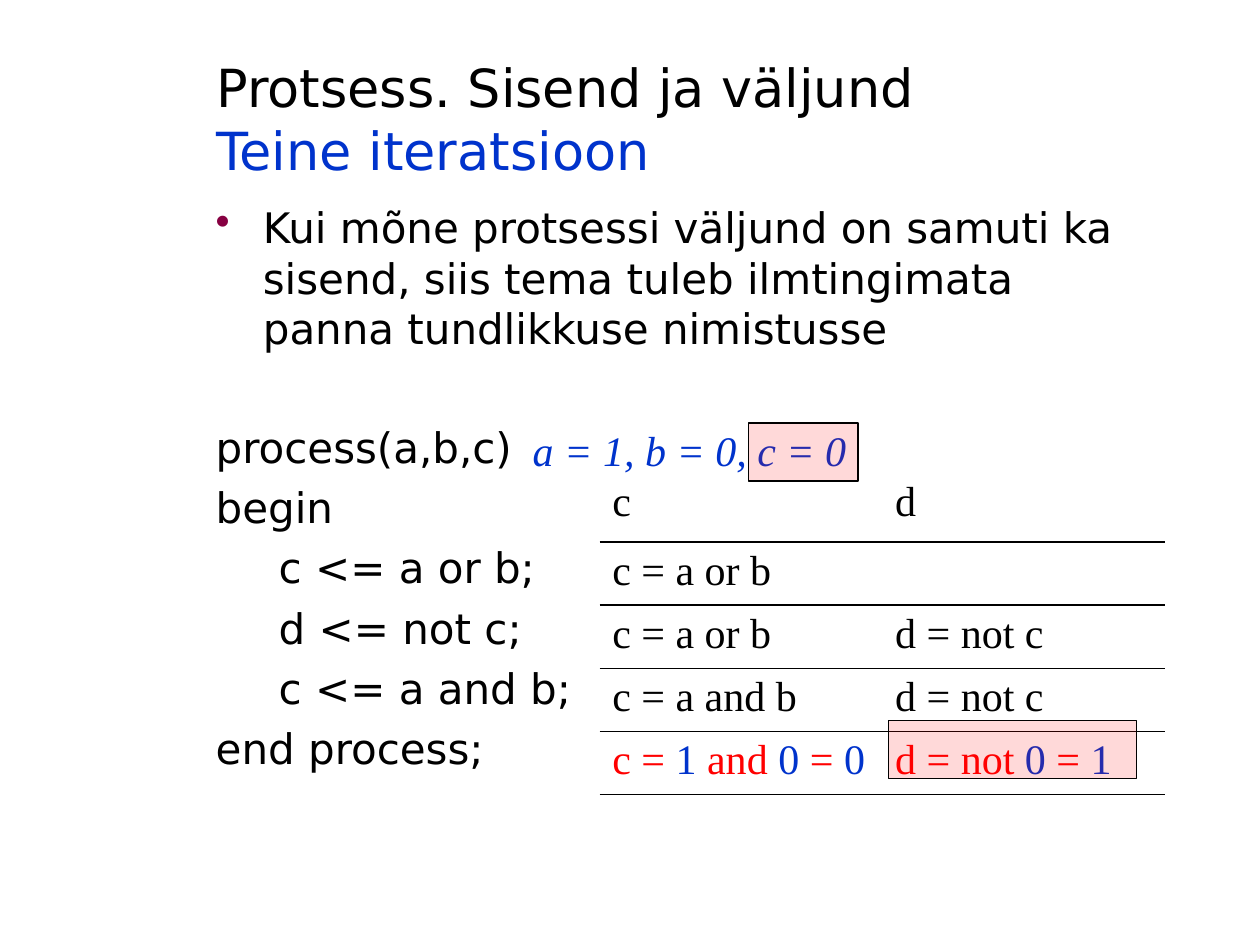
from dataclasses import dataclass

from lxml.etree import SubElement
from pptx import Presentation
from pptx.dml.color import RGBColor
from pptx.enum.shapes import MSO_SHAPE
from pptx.enum.text import MSO_ANCHOR, MSO_AUTO_SIZE, PP_ALIGN
from pptx.oxml import parse_xml
from pptx.oxml.ns import nsdecls, qn
from pptx.util import Cm, Pt


@dataclass(frozen=True)
class Theme:
    black: str = "000000"
    blue: str = "0033CC"
    red: str = "FF0000"
    plum: str = "870042"
    sans: str = "DejaVu Sans"
    serif: str = "Times New Roman"
    head: int = 30
    body: int = 24
    gap: float = 5.6


T = Theme()
INTRO = ("Kui mõne protsessi väljund on samuti ka sisend, "
         "siis tema tuleb ilmtingimata panna tundlikkuse nimistusse")
CODE = [("process(a,b,c)", 0), ("begin", 0), ("c <= a or b;", 1),
        ("d <= not c;", 1), ("c <= a and b;", 1), ("end process;", 0)]


def plain(text):
    return [(text, T.black)]


ROWS = [
    [plain("c"), plain("d")],
    [plain("c = a or b"), []],
    [plain("c = a or b"), plain("d = not c")],
    [plain("c = a and b"), plain("d = not c")],
    [[("c = ", T.red), ("1", T.blue), (" and ", T.red), ("0", T.blue),
      (" = ", T.red), ("0", T.blue)],
     [("d = not ", T.red), ("0", T.blue), (" = ", T.red), ("1", T.blue)]],
]


def add_run(para, text, color=T.black, font=T.sans, size=T.body, italic=False):
    run = para.add_run()
    run.text = text
    run.font.name, run.font.size, run.font.italic = font, Pt(size), italic
    run.font.color.rgb = RGBColor.from_string(color)


def set_title(slide):
    title = slide.shapes.title
    title.left, title.top = Cm(4.11), Cm(1.19)
    title.width, title.height = Cm(18.9), Cm(2.39)
    frame = title.text_frame
    frame.auto_size = MSO_AUTO_SIZE.NONE
    frame.vertical_anchor = MSO_ANCHOR.MIDDLE
    para = frame.paragraphs[0]
    para.alignment = PP_ALIGN.LEFT
    add_run(para, "Protsess. Sisend ja väljund", size=T.head)
    para.add_line_break()
    add_run(para, "Teine iteratsioon", T.blue, size=T.head)


def add_box(slide, left, top, width, height, wrap=True):
    box = slide.shapes.add_textbox(Cm(left), Cm(top), Cm(width), Cm(height))
    box.text_frame.word_wrap = wrap
    return box.text_frame


def set_bullet(para):
    props = para._p.get_or_add_pPr()
    props.set("marL", str(Cm(0.95)))
    props.set("indent", str(-Cm(0.95)))
    color = SubElement(props, qn("a:buClr"))
    SubElement(color, qn("a:srgbClr"), val=T.plum)
    SubElement(props, qn("a:buChar"), char="•")


def add_body(slide):
    frame = add_box(slide, 4.1, 3.94, 19, 13.44)
    para = frame.paragraphs[0]
    set_bullet(para)
    add_run(para, INTRO)
    for row, (text, level) in enumerate(CODE):
        para = frame.add_paragraph()
        # The code block starts one full line below the bullet.
        para.space_before = Pt(T.gap if row else 2 * T.gap + 28)
        para._p.get_or_add_pPr().set("marL", str(Cm(1.27 * level)))
        add_run(para, text)


def set_edges(cell, shown):
    """Draw black lines on the sides in shown and hide the others."""
    props = cell._tc.get_or_add_tcPr()
    for spot, side in enumerate("LRTB"):
        fill = (f'<a:solidFill><a:srgbClr val="{T.black}"/></a:solidFill>'
                if side in shown else "<a:noFill/>")
        props.insert(spot, parse_xml(
            f'<a:ln{side} {nsdecls("a")} w="{Pt(1)}">{fill}</a:ln{side}>'))


def add_grid(slide):
    frame = slide.shapes.add_table(len(ROWS), 2, Cm(12.09), Cm(9.53),
                                   Cm(11.4), Cm(6.2))
    table = frame.table
    table.first_row = table.horz_banding = False
    for col in table.columns:
        col.width = Cm(5.7)
    for y, row in enumerate(ROWS):
        table.rows[y].height = Cm(1.2 if y else 1.4)
        for x, parts in enumerate(row):
            cell = table.cell(y, x)
            cell.fill.background()
            set_edges(cell, "TB" if y else "B")
            for text, color in parts:
                add_run(cell.text_frame.paragraphs[0], text, color, T.serif)


def add_mark(slide, left, top, width):
    """Add a see-through red frame over a value."""
    mark = slide.shapes.add_shape(MSO_SHAPE.RECTANGLE, Cm(left), Cm(top),
                                  Cm(width), Cm(1.17))
    mark.shadow.inherit = False
    mark.fill.solid()
    mark.fill.fore_color.rgb = RGBColor.from_string(T.red)
    tint = mark._element.spPr.find(qn("a:solidFill")).find(qn("a:srgbClr"))
    SubElement(tint, qn("a:alpha"), val="15000")
    mark.line.color.rgb = RGBColor.from_string(T.black)
    mark.line.width = Pt(0.75)


def main():
    deck = Presentation()
    deck.slide_width, deck.slide_height = Cm(25.4), Cm(19.05)
    slide = deck.slides.add_slide(deck.slide_layouts[5])
    set_title(slide)
    add_body(slide)
    add_grid(slide)
    label = add_box(slide, 10.49, 8.43, 7.01, 1.27, wrap=False)
    add_run(label.paragraphs[0], "a = 1, b = 0, c = 0", T.blue, T.serif,
            italic=True)
    add_mark(slide, 15.09, 8.53, 2.21)
    add_mark(slide, 17.91, 14.53, 5)
    deck.save("out.pptx")


if __name__ == "__main__":
    main()
